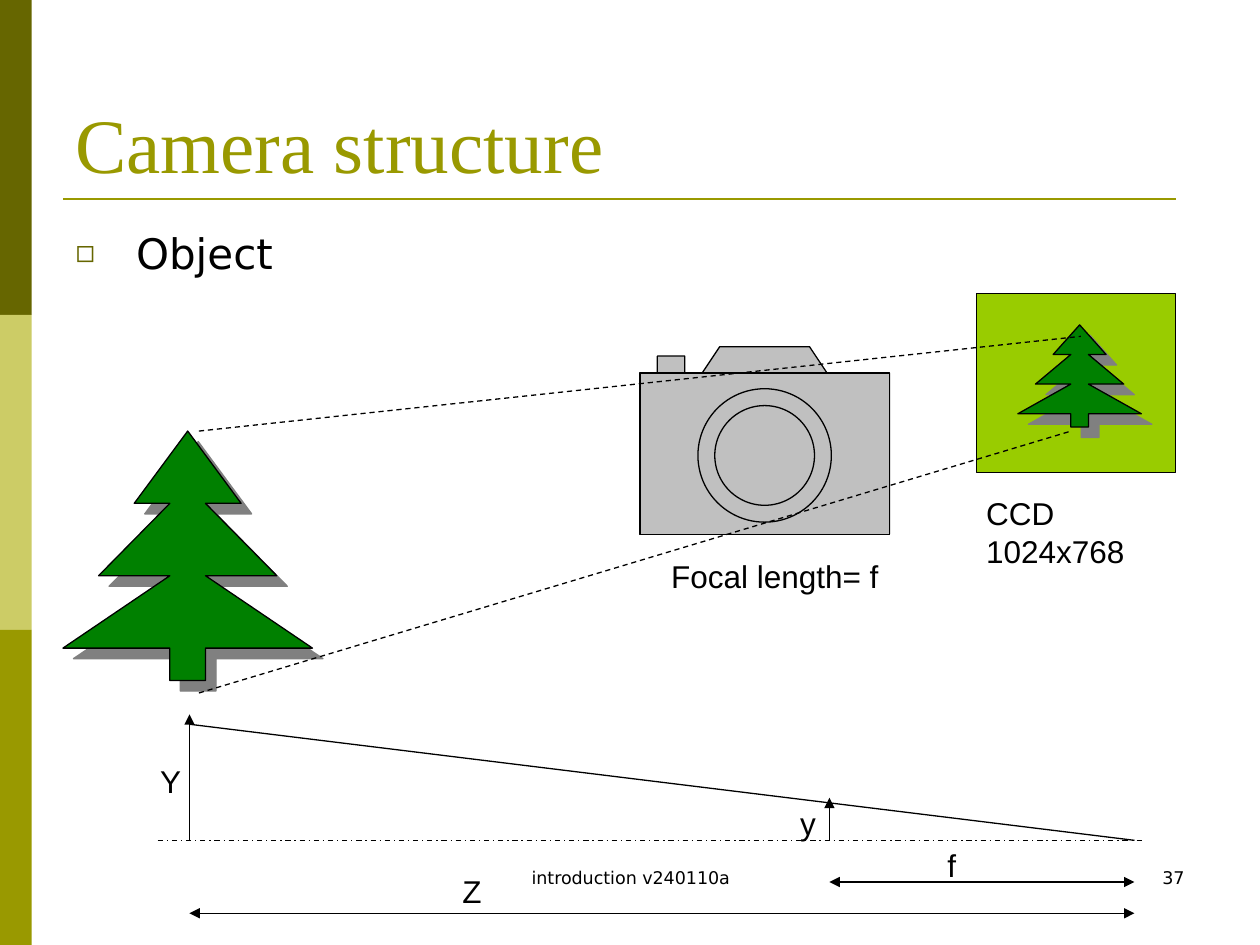
from lxml.etree import SubElement
from pptx import Presentation
from pptx.dml.color import RGBColor
from pptx.enum.dml import MSO_LINE as Dash
from pptx.enum.shapes import MSO_CONNECTOR as Link, MSO_SHAPE as Preset
from pptx.enum.text import MSO_ANCHOR as Anchor, MSO_AUTO_SIZE as Fit, PP_ALIGN as Align
from pptx.oxml.ns import qn
from pptx.util import Cm, Pt

BLACK, OLIVE, DARK_OLIVE, LIGHT_OLIVE = "000000", "999900", "666600", "CCCC66"
GREEN, LIME, SILVER, GREY = "008000", "99CC00", "C0C0C0", "808080"
TREE_HALF = [(4 / 7, 1), (4 / 7, 0.87), (1, 0.87), (4 / 7, 0.58), (6 / 7, 0.58),
             (4 / 7, 0.29), (5 / 7, 0.29), (0.5, 0)]
CAMERA_OUTLINE = [(0, 1), (0, 0.14), (0.07, 0.14), (0.07, 0.05), (0.18, 0.05),
                  (0.18, 0.14), (0.25, 0.14), (0.32, 0), (0.68, 0), (0.75, 0.14),
                  (1, 0.14), (1, 1)]


def color(code):
    return RGBColor.from_string(code)


def paint(shape, fill, line=None):
    shape.shadow.inherit = False
    shape.fill.solid()
    shape.fill.fore_color.rgb = color(fill)
    if line:
        shape.line.color.rgb = color(line)
        shape.line.width = Pt(0.75)
    else:
        shape.line.fill.background()


def add_preset(page, preset, box, fill, line=None):
    shape = page.shapes.add_shape(preset, *map(Cm, box))
    paint(shape, fill, line)
    return shape


def add_outline(page, box, points, fill):
    left, top, width, height = box
    corners = [(Cm(left + x * width), Cm(top + y * height)) for x, y in points]
    builder = page.shapes.build_freeform(*corners[0])
    builder.add_line_segments(corners[1:], close=True)
    shape = builder.convert_to_shape()
    paint(shape, fill, BLACK)
    return shape


def add_line(page, start, end, code=BLACK, width=0.75, dash=None, arrows=()):
    line = page.shapes.add_connector(Link.STRAIGHT, *map(Cm, (*start, *end)))
    line.line.color.rgb = color(code)
    line.line.width = Pt(width)
    if dash:
        line.line.dash_style = dash
    for arrow in arrows:
        SubElement(line.line._get_or_add_ln(), qn(f"a:{arrow}"), type="triangle")
    SubElement(line._element.spPr, qn("a:effectLst"))


def style(frame, font, size, code=BLACK, align=Align.LEFT):
    for para in frame.paragraphs:
        para.alignment = align
        for span in para.runs:
            span.font.name = font
            span.font.size = Pt(size)
            span.font.color.rgb = color(code)


def add_label(page, box, text):
    frame = page.shapes.add_textbox(*map(Cm, box)).text_frame
    frame.text = text
    frame.word_wrap = False
    frame.auto_size = Fit.SHAPE_TO_FIT_TEXT
    style(frame, "Arial", 18)


def add_footer(page, box, text, align):
    frame = page.shapes.add_textbox(*map(Cm, box)).text_frame
    frame.text = text
    frame.word_wrap = True
    style(frame, "DejaVu Sans", 10, align=align)


def move(shape, box):
    shape.left, shape.top, shape.width, shape.height = map(Cm, box)


def add_sidebar(page, box):
    left, top, width, height = box
    band = height / 3
    for index, code in enumerate((DARK_OLIVE, LIGHT_OLIVE, OLIVE)):
        add_preset(page, Preset.RECTANGLE, (left, top + index * band, width, band), code)


def fill_title(page, box, text):
    title = page.shapes.title
    move(title, box)
    frame = title.text_frame
    frame.text = text
    frame.vertical_anchor = Anchor.BOTTOM
    frame.auto_size = Fit.NONE
    style(frame, "Times New Roman", 44, OLIVE)
    left, top, width, height = box
    add_line(page, (left, top + height + 0.07), (left + 22.43, top + height + 0.07), OLIVE, 1.5)


def fill_body(page, box, text):
    body = page.placeholders[1]
    move(body, box)
    frame = body.text_frame
    frame.text = text
    frame.auto_size = Fit.NONE
    style(frame, "DejaVu Sans", 24)
    para = frame.paragraphs[0]
    para.space_before = Pt(4.8)
    props = para._p.get_or_add_pPr()
    props.set("marL", str(Cm(0.95)))
    props.set("indent", str(-Cm(0.95)))
    SubElement(SubElement(props, qn("a:buClr")), qn("a:srgbClr"), val=DARK_OLIVE)
    SubElement(props, qn("a:buSzPct"), val="75000")
    SubElement(props, qn("a:buChar"), char="◻")


def add_tree(page, box):
    mirrored = [(1 - x, y) for x, y in reversed(TREE_HALF[:-1])]
    tree = add_outline(page, box, TREE_HALF + mirrored, GREEN)
    effects = tree._element.spPr.find(qn("a:effectLst"))
    shadow = SubElement(effects, qn("a:outerShdw"), dist=str(Pt(8.5)), dir="2700000",
                        algn="ctr", rotWithShape="0")
    SubElement(shadow, qn("a:srgbClr"), val=GREY)


def add_camera(page, box):
    left, top, width, height = box
    add_outline(page, box, CAMERA_OUTLINE, SILVER)
    add_preset(page, Preset.RECTANGLE, (left, top + 0.14 * height, width, 0.86 * height),
               SILVER, BLACK)
    for size in (2.69, 2.01):
        ring = (left + 0.5 * width - size / 2, top + 0.58 * height - size / 2, size, size)
        add_preset(page, Preset.OVAL, ring, SILVER, BLACK)
    add_label(page, (left + 0.38, top + 4.11, 4.7, 1.02), "Focal length= f")


def add_sensor(page, box):
    left, top, width, height = box
    add_preset(page, Preset.RECTANGLE, box, LIME, BLACK)
    add_tree(page, (left + 0.83, top + 0.63, 2.49, 2.06))
    add_label(page, (left - 0.06, top + height + 0.3, 3.3, 1.78), "CCD\n1024x768")


def add_ray_diagram(page, box):
    left, top, width, height = box
    axis, object_x, image_x, pinhole_x = top + 2.54, left + 0.64, left + 13.54, left + 19.69
    both = ("headEnd", "tailEnd")
    add_line(page, (left, axis), (left + width, axis), dash=Dash.DASH_DOT)
    add_line(page, (object_x, top + 0.2), (pinhole_x, axis))
    for x, tip in ((object_x, top), (image_x, top + 1.68)):
        add_line(page, (x, axis), (x, tip), arrows=("tailEnd",))
    for x, y in ((image_x, top + 3.38), (object_x, top + height)):
        add_line(page, (x, y), (pinhole_x, y), arrows=both)
    for text, x, y, label_width in (("f", 15.67, 2.54, 0.69), ("Y", -0.2, 0.84, 0.94),
                                    ("y", 12.7, 1.68, 0.84), ("Z", 5.89, 3.05, 0.89)):
        add_label(page, (left + x, top + y, label_width, 1.02), text)


def main():
    deck = Presentation()
    deck.slide_width, deck.slide_height = Cm(25.4), Cm(19.05)
    page = deck.slides.add_slide(deck.slide_layouts[1])
    add_sidebar(page, (0, 0, 0.64, 19.05))
    fill_title(page, (1.27, 0.76, 22.86, 3.18), "Camera structure")
    fill_body(page, (1.27, 4.45, 11.23, 12.57), " Object")
    add_footer(page, (8.69, 17.35, 8.05, 1.27), "introduction v240110a", Align.CENTER)
    add_footer(page, (18.21, 17.35, 5.92, 1.27), "37", Align.RIGHT)
    add_camera(page, (12.9, 6.99, 5.03, 3.78))
    add_tree(page, (1.27, 8.69, 5.03, 5.03))
    add_sensor(page, (19.69, 5.92, 4.01, 3.61))
    add_line(page, (4.01, 13.97), (21.59, 8.69), dash=Dash.DASH)
    add_line(page, (4.01, 8.69), (21.79, 6.78), dash=Dash.DASH)
    add_ray_diagram(page, (3.18, 14.4, 19.89, 4.01))
    deck.save("out.pptx")


if __name__ == "__main__":
    main()
